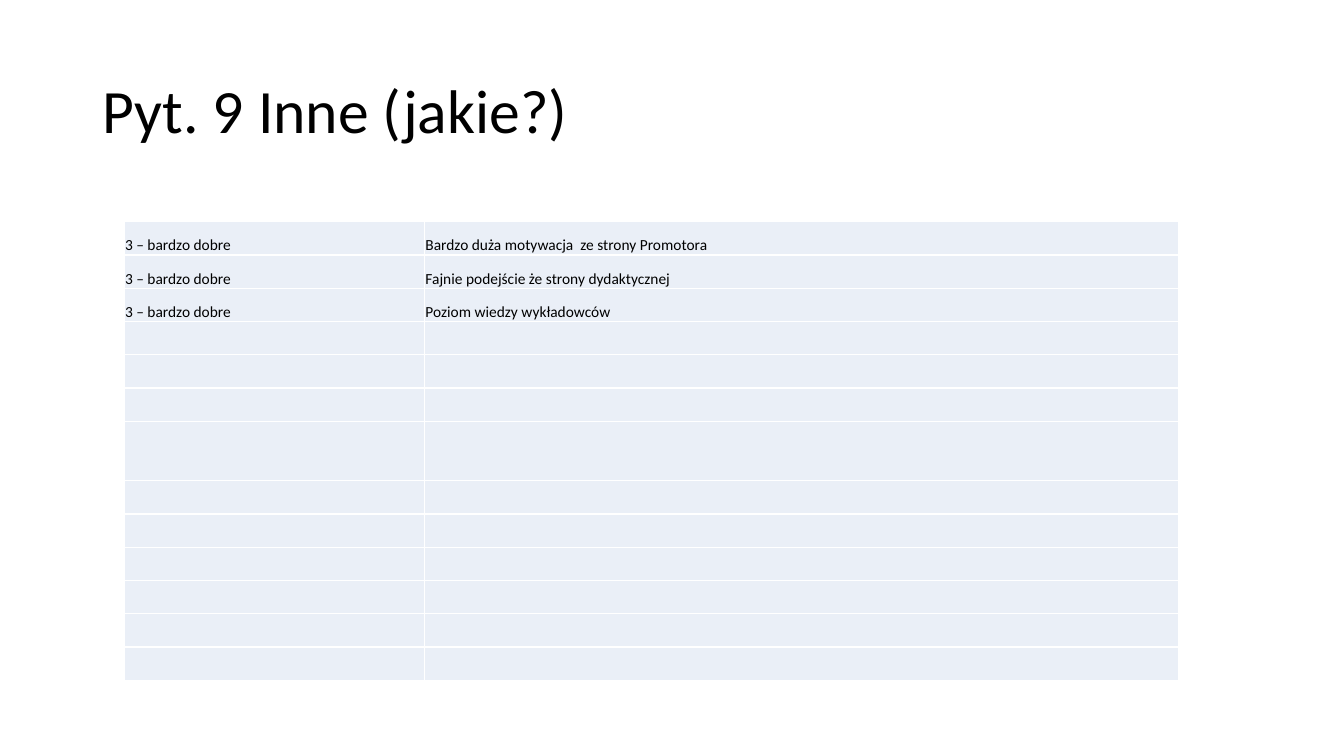
from dataclasses import dataclass

from lxml.etree import SubElement
from pptx import Presentation
from pptx.dml.color import RGBColor
from pptx.enum.text import MSO_ANCHOR
from pptx.oxml.ns import qn
from pptx.slide import Slide
from pptx.table import _Cell
from pptx.text.text import _Paragraph
from pptx.util import Inches, Pt

BLACK = RGBColor(0x00, 0x00, 0x00)
WHITE = RGBColor(0xFF, 0xFF, 0xFF)
PALE_BLUE = RGBColor(0xEA, 0xEF, 0xF7)
FONT = "Calibri"

COLUMN_WIDTHS = (2.98, 7.48)
ROW_COUNT = 13
ROW_HEIGHT = 0.33
TALL_ROW, TALL_HEIGHT = 6, 0.59
CELL_FORMAT = {
    "margin_left": Inches(0.01),
    "margin_right": Inches(0.01),
    "margin_top": Inches(0.01),
    "margin_bottom": Inches(0),
    "vertical_anchor": MSO_ANCHOR.BOTTOM,
}


@dataclass(frozen=True)
class Answer:
    rating: str
    comment: str


ANSWERS = (
    Answer("3 – bardzo dobre", "Bardzo duża motywacja  ze strony Promotora"),
    Answer("3 – bardzo dobre", "Fajnie podejście że strony dydaktycznej"),
    Answer("3 – bardzo dobre", "Poziom wiedzy wykładowców"),
)


def write(p: _Paragraph, text: str, size: float) -> None:
    r = p.add_run()
    r.text = text
    for name, value in {"name": FONT, "size": Pt(size)}.items():
        setattr(r.font, name, value)
    r.font.color.rgb = BLACK


def add_title(s: Slide, text: str) -> None:
    sp = s.shapes.add_textbox(Inches(0.92), Inches(0.4), Inches(11.5), Inches(1.45))
    tf = sp.text_frame
    tf.word_wrap = True
    tf.vertical_anchor = MSO_ANCHOR.MIDDLE
    p = tf.paragraphs[0]
    p.line_spacing = 0.9
    write(p, text, 44)


def format_cell(cell: _Cell) -> None:
    for name, value in CELL_FORMAT.items():
        setattr(cell, name, value)
    properties = cell._tc.get_or_add_tcPr()
    for side in ("a:lnL", "a:lnR", "a:lnT", "a:lnB"):
        line = SubElement(properties, qn(side), w=str(Pt(1)))
        fill = SubElement(line, qn("a:solidFill"))
        SubElement(fill, qn("a:srgbClr"), val=str(WHITE))
    # The schema wants the fill after the borders
    cell.fill.solid()
    cell.fill.fore_color.rgb = PALE_BLUE


def add_answer_table(s: Slide) -> None:
    heights = [ROW_HEIGHT] * ROW_COUNT
    heights[TALL_ROW] = TALL_HEIGHT
    table = s.shapes.add_table(
        ROW_COUNT, len(COLUMN_WIDTHS), Inches(1.23), Inches(2.2),
        Inches(sum(COLUMN_WIDTHS)), Inches(sum(heights)),
    ).table
    table.first_row = False
    table.horz_banding = False
    for column, width in zip(table.columns, COLUMN_WIDTHS):
        column.width = Inches(width)
    for row, height in zip(table.rows, heights):
        row.height = Inches(height)
    for cell in table.iter_cells():
        format_cell(cell)
    for row, answer in zip(table.rows, ANSWERS):
        for cell, text in zip(row.cells, (answer.rating, answer.comment)):
            write(cell.text_frame.paragraphs[0], text, 11)


def main() -> None:
    prs = Presentation()
    prs.slide_width = Inches(13.33)
    prs.slide_height = Inches(7.5)
    s = prs.slides.add_slide(prs.slide_layouts[6])
    add_title(s, "Pyt. 9 Inne (jakie?)")
    add_answer_table(s)
    prs.save("out.pptx")


if __name__ == "__main__":
    main()
